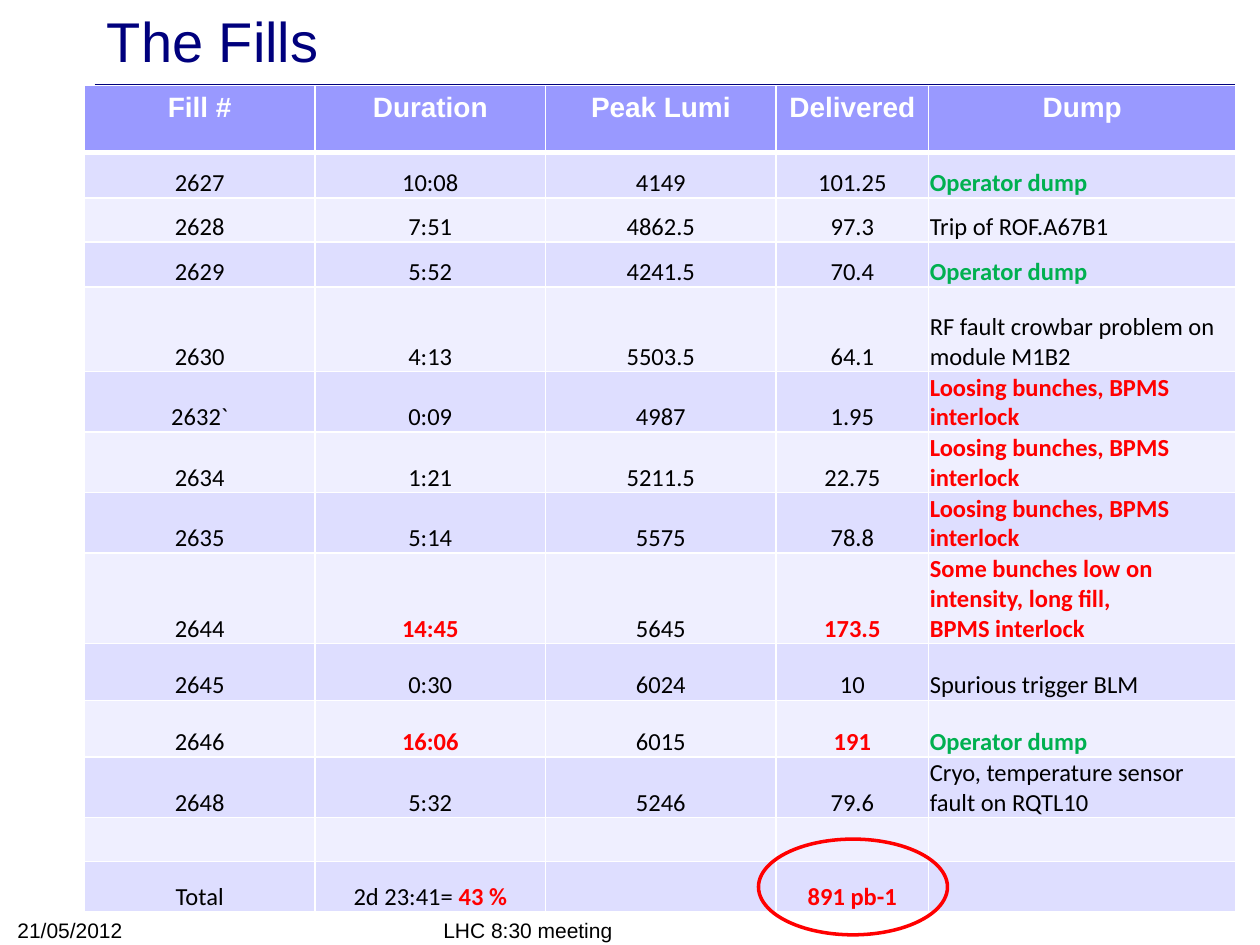
import pptx
import pptx.util
import pptx.dml.color
import pptx.enum.text
import pptx.enum.shapes
import pptx.oxml
import pptx.oxml.ns

Inches, Pt = pptx.util.Inches, pptx.util.Pt
ALIGN, ANCHOR = pptx.enum.text.PP_ALIGN, pptx.enum.text.MSO_ANCHOR

COLORS = {"navy": "00007D", "black": "000000", "white": "FFFFFF",
          "red": "FF0000", "green": "00B050", "head": "9999FF",
          "dark": "DEDEFF", "light": "EFEFFF"}

# A cell is a plain string or a list of (text, colour) runs; coloured runs are bold.
GOOD = [("Operator dump", "green")]
LOST = [("Loosing bunches, BPMS interlock", "red")]
HEADS = ["Fill #", "Duration", "Peak Lumi", "Delivered", "Dump"]
FILLS = [
    ["2627", "10:08", "4149", "101.25", GOOD],
    ["2628", "7:51", "4862.5", "97.3", "Trip of ROF.A67B1"],
    ["2629", "5:52", "4241.5", "70.4", GOOD],
    ["2630", "4:13", "5503.5", "64.1", "RF fault crowbar problem on module M1B2"],
    ["2632`", "0:09", "4987", "1.95", LOST],
    ["2634", "1:21", "5211.5", "22.75", LOST],
    ["2635", "5:14", "5575", "78.8", LOST],
    ["2644", [("14:45", "red")], "5645", [("173.5", "red")],
     [("Some bunches low on intensity, long fill, \vBPMS interlock", "red")]],
    ["2645", "0:30", "6024", "10", "Spurious trigger BLM"],
    ["2646", [("16:06", "red")], "6015", [("191", "red")], GOOD],
    ["2648", "5:32", "5246", "79.6", "Cryo, temperature sensor fault on RQTL10"],
    ["", "", "", "", ""],
    ["Total", [("2d 23:41= ", "black"), ("43 %", "red")], "",
     [("891 pb-1", "red")], ""],
]
WIDTHS = [1.83, 1.83, 1.83, 1.21, 2.44]
HEIGHTS = [0.53, 0.36, 0.35, 0.36, 0.67, 0.48, 0.48, 0.48, 0.72,
           0.45, 0.45, 0.48, 0.35, 0.4]
LABELS = [
    ("The Fills", (0.75, 0.03, 9, 0.57),
     dict(size=32, color="navy", anchor=ANCHOR.MIDDLE)),
    ("LHC 8:30 meeting", (3.42, 7.25, 3.17, 0.28),
     dict(size=12, anchor=ANCHOR.BOTTOM)),
    ("21/05/2012", (0.04, 7.24, 2.33, 0.29),
     dict(size=12, anchor=ANCHOR.BOTTOM)),
]


def rgb(name):
    return pptx.dml.color.RGBColor.from_string(COLORS[name])


def write(frame, text, size=14, font="Arial", color="black", bold=False,
          align=ALIGN.LEFT, anchor=None):
    """Fill a text frame from a string or a list of (text, colour) runs."""
    if anchor is not None:
        frame.vertical_anchor = anchor
    para = frame.paragraphs[0]
    para.alignment = align
    runs = [(text, color)] if isinstance(text, str) else text
    for words, tint in runs:
        for i, line in enumerate(words.split("\v")):
            if i:
                para.add_line_break()
            if not line:
                continue
            run = para.add_run()
            run.text = line
            run.font.size, run.font.name = Pt(size), font
            run.font.bold = bold or tint in ("red", "green")
            run.font.color.rgb = rgb(tint)


def edge(cell, base):
    """Draw white cell borders, the bottom one base points wide."""
    props = cell._tc.get_or_add_tcPr()
    for side, wide in (("L", 1), ("R", 1), ("T", 1), ("B", base)):
        props.append(pptx.oxml.parse_xml(
            f'<a:ln{side} {pptx.oxml.ns.nsdecls("a")} w="{Pt(wide)}"><a:solidFill>'
            f'<a:srgbClr val="{COLORS["white"]}"/></a:solidFill></a:ln{side}>'))


def paint(cell, name, base=1):
    edge(cell, base)
    cell.fill.solid()
    cell.fill.fore_color.rgb = rgb(name)


def add_rule(slide):
    rule = slide.shapes.add_connector(
        pptx.enum.shapes.MSO_CONNECTOR.STRAIGHT,
        Inches(0.75), Inches(0.68), Inches(9.8), Inches(0.68))
    rule.line.color.rgb, rule.line.width = rgb("navy"), Pt(2)
    rule._element.spPr.append(pptx.oxml.parse_xml(
        f'<a:effectLst {pptx.oxml.ns.nsdecls("a")}/>'))


def add_fills(slide):
    table = slide.shapes.add_table(
        len(HEIGHTS), len(WIDTHS), Inches(0.67), Inches(0.68),
        Inches(sum(WIDTHS)), Inches(sum(HEIGHTS))).table
    table.horz_banding = False
    for col, wide in zip(table.columns, WIDTHS):
        col.width = Inches(wide)
    for row, high in zip(table.rows, HEIGHTS):
        row.height = Inches(high)
    for c, head in enumerate(HEADS):
        cell = table.cell(0, c)
        paint(cell, "head", base=3)
        write(cell.text_frame, head, size=16, color="white", bold=True,
              align=ALIGN.CENTER)
    for r, fill in enumerate(FILLS, 1):
        for c, text in enumerate(fill):
            cell = table.cell(r, c)
            paint(cell, "dark" if r % 2 else "light")
            cell.margin_left = cell.margin_right = cell.margin_top = Inches(0.01)
            cell.margin_bottom = 0
            cell.vertical_anchor = ANCHOR.BOTTOM
            if text:
                write(cell.text_frame, text, font="Calibri",
                      align=ALIGN.LEFT if HEADS[c] == "Dump" else ALIGN.CENTER)


def add_ring(slide):
    ring = slide.shapes.add_shape(
        pptx.enum.shapes.MSO_SHAPE.OVAL,
        Inches(6.02), Inches(6.66), Inches(1.5), Inches(0.76))
    ring.shadow.inherit = False
    ring.fill.background()
    ring.line.color.rgb, ring.line.width = rgb("red"), Pt(2)


def main():
    deck = pptx.Presentation()
    deck.slide_width, deck.slide_height = Inches(10), Inches(7.5)
    slide = deck.slides.add_slide(deck.slide_layouts[6])
    add_rule(slide)
    for text, place, look in LABELS:
        box = slide.shapes.add_textbox(*map(Inches, place))
        box.text_frame.word_wrap = True
        write(box.text_frame, text, **look)
    add_fills(slide)
    add_ring(slide)
    deck.save("out.pptx")


if __name__ == "__main__":
    main()
